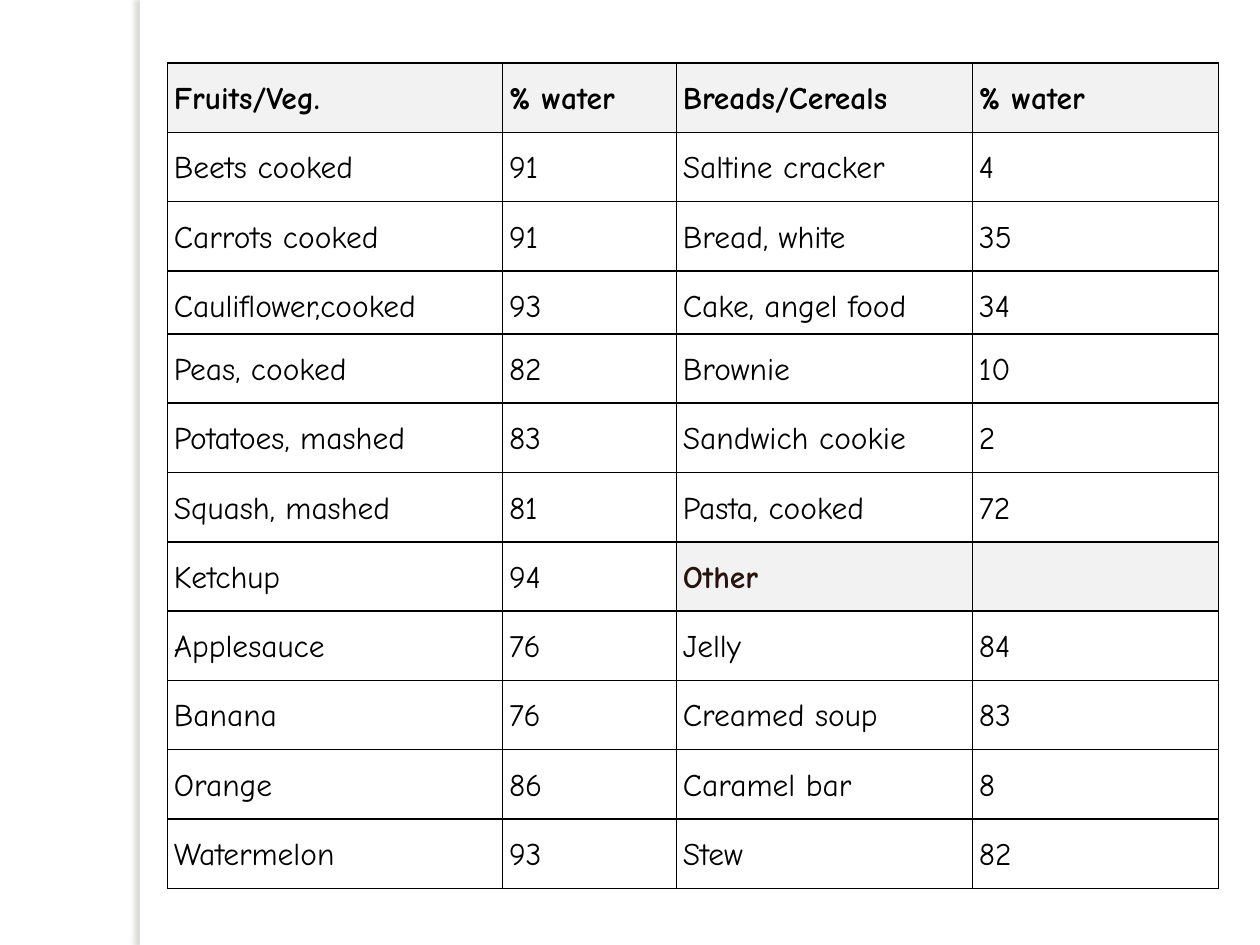
from pptx import Presentation
from pptx.dml.color import RGBColor
from pptx.enum.shapes import MSO_SHAPE
from pptx.enum.text import PP_ALIGN
from pptx.oxml import parse_xml
from pptx.oxml.ns import nsdecls
from pptx.util import Inches, Pt

COLORS = {
    "paper": "FFFFFF",
    "ink": "000000",
    "other": "28140E",
    "heading": "F2F2F2",
    "shadow": "736F63",
}
FONT = "Comic Neue"
COLUMN_WIDTHS = [2.66, 1.38, 2.35, 1.95]
ROW_HEIGHT, SHORT_HEIGHT, SHORT_ROW = 0.55, 0.5, 3
OTHER_ROW = 7
FOODS = [
    ("Fruits/Veg.", "% water", "Breads/Cereals", "% water"),
    ("Beets cooked", "91", "Saltine cracker", "4"),
    ("Carrots cooked", "91", "Bread, white", "35"),
    ("Cauliflower,cooked", "93", "Cake, angel food", "34"),
    ("Peas, cooked", "82", "Brownie", "10"),
    ("Potatoes, mashed", "83", "Sandwich cookie", "2"),
    ("Squash, mashed", "81", "Pasta, cooked", "72"),
    ("Ketchup", "94", "Other", ""),
    ("Applesauce", "76", "Jelly", "84"),
    ("Banana", "76", "Creamed soup", "83"),
    ("Orange", "86", "Caramel bar", "8"),
    ("Watermelon", "93", "Stew", "82"),
]


def rgb(name):
    return RGBColor.from_string(COLORS[name])


def add_page_edge(slide, left, top, width, height):
    edge = slide.shapes.add_shape(
        MSO_SHAPE.RECTANGLE, Inches(left), Inches(top), Inches(width), Inches(height))
    edge.fill.solid()
    edge.fill.fore_color.rgb = rgb("paper")
    edge.line.fill.background()
    edge.shadow.inherit = False
    effects = edge.element.spPr.find("{*}effectLst")
    effects.append(parse_xml(
        f'<a:outerShdw {nsdecls("a")} blurRad="{Pt(3)}" dist="{Pt(3)}" dir="10800000" '
        f'algn="ctr" rotWithShape="0"><a:srgbClr val="{COLORS["shadow"]}">'
        '<a:alpha val="25000"/></a:srgbClr></a:outerShdw>'))


def add_borders(cell):
    properties = cell._tc.get_or_add_tcPr()
    for position, side in enumerate(("lnL", "lnR", "lnT", "lnB")):
        properties.insert(position, parse_xml(
            f'<a:{side} {nsdecls("a")} w="{Pt(1)}"><a:solidFill>'
            f'<a:srgbClr val="{COLORS["ink"]}"/></a:solidFill></a:{side}>'))


def fill_cell(cell, words, heading, ink):
    cell.margin_left = cell.margin_right = Inches(0.05)
    cell.margin_top = cell.margin_bottom = 0
    if heading:
        cell.fill.solid()
        cell.fill.fore_color.rgb = rgb("heading")
    else:
        cell.fill.background()
    add_borders(cell)
    if not words:
        return
    paragraph = cell.text_frame.paragraphs[0]
    paragraph.alignment = PP_ALIGN.JUSTIFY
    paragraph.line_spacing = 1.5
    run = paragraph.add_run()
    run.text = words
    run.font.name = FONT
    run.font.size = Pt(18)
    run.font.bold = heading
    run.font.color.rgb = rgb(ink)


def add_water_table(slide, left, top, width, height):
    table = slide.shapes.add_table(
        len(FOODS), len(COLUMN_WIDTHS),
        Inches(left), Inches(top), Inches(width), Inches(height)).table
    table.first_row = table.horz_banding = False
    for column, column_width in zip(table.columns, COLUMN_WIDTHS):
        column.width = Inches(column_width)
    for r, foods in enumerate(FOODS):
        table.rows[r].height = Inches(SHORT_HEIGHT if r == SHORT_ROW else ROW_HEIGHT)
        for c, words in enumerate(foods):
            other = r == OTHER_ROW and c >= 2
            fill_cell(table.cell(r, c), words, r == 0 or other, "other" if other else "ink")


def main():
    deck = Presentation()
    deck.slide_width, deck.slide_height = Inches(10), Inches(7.5)
    slide = deck.slides.add_slide(deck.slide_layouts[6])
    add_page_edge(slide, 1.11, 0, 0.08, 7.5)
    add_water_table(slide, 1.33, 0.5, 8.34, 6.55)
    deck.save("out.pptx")


if __name__ == "__main__":
    main()
